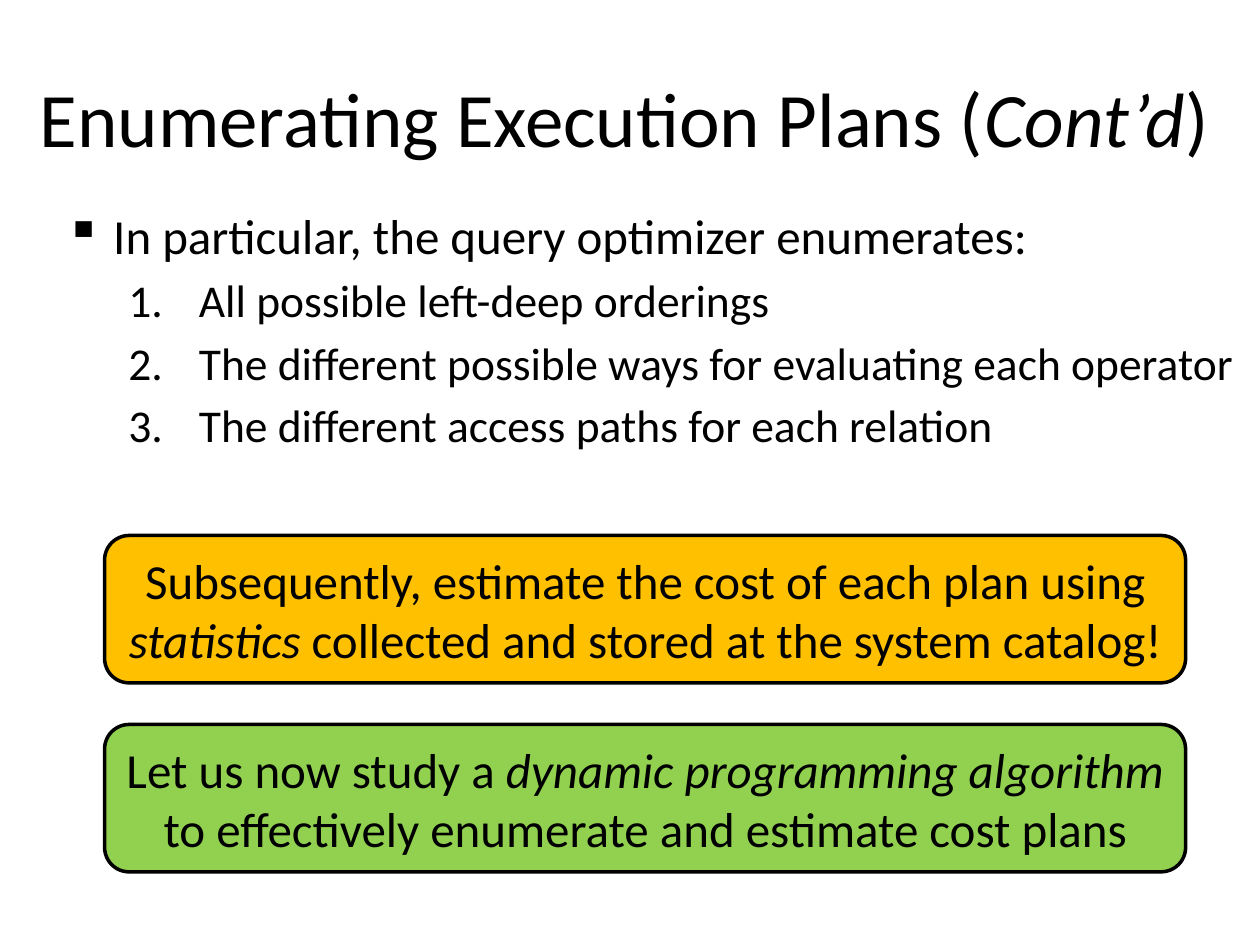
"""Build the slide on enumerating execution plans."""
import lxml.etree
import pptx
import pptx.dml.color
import pptx.enum.shapes
import pptx.enum.text
import pptx.oxml.ns
import pptx.util

Inches = pptx.util.Inches
Pt = pptx.util.Pt
CENTER = pptx.enum.text.PP_ALIGN.CENTER
MIDDLE = pptx.enum.text.MSO_ANCHOR.MIDDLE


def color(hex_string):
    return pptx.dml.color.RGBColor.from_string(hex_string)


def write(paragraph, size, *texts):
    paragraph.font.name = "Calibri"
    paragraph.font.size = Pt(size)
    paragraph.font.color.rgb = color("000000")
    for index, text in enumerate(texts):
        run = paragraph.add_run()
        run.text = text
        if index % 2:
            run.font.italic = True


presentation = pptx.Presentation()
presentation.slide_width = Inches(10)
presentation.slide_height = Inches(7.5)
slide = presentation.slides.add_slide(presentation.slide_layouts[6])

title = slide.shapes.add_textbox(Inches(0.08), Inches(0.3), Inches(9.75), Inches(1.25))
title.text_frame.word_wrap = True
title.text_frame.vertical_anchor = MIDDLE
title.text_frame.paragraphs[0].alignment = CENTER
write(title.text_frame.paragraphs[0], 44, "Enumerating Execution Plans (", "Cont’d", ")")

body = slide.shapes.add_textbox(Inches(0.42), Inches(1.58), Inches(9.58), Inches(5.75))
body.text_frame.word_wrap = True
items = [
    (0, "In particular, the query optimizer enumerates:"),
    (1, "All possible left-deep orderings"),
    (1, "The different possible ways for evaluating each operator"),
    (1, "The different access paths for each relation"),
]
levels = [
    (28, 0.38, -0.38, "a:buChar", {"char": "▪"}),
    (26, 1.06, -0.56, "a:buAutoNum", {"type": "arabicPeriod"}),
]
for index, (level, text) in enumerate(items):
    paragraph = body.text_frame.add_paragraph() if index else body.text_frame.paragraphs[0]
    size, margin, indent, bullet, attributes = levels[level]
    paragraph.level = level
    paragraph.space_before = Pt(4.6)
    write(paragraph, size, text)
    properties = paragraph._p.get_or_add_pPr()
    properties.set("marL", str(Inches(margin)))
    properties.set("indent", str(Inches(indent)))
    marker = lxml.etree.Element(pptx.oxml.ns.qn(bullet), attributes)
    properties.find(pptx.oxml.ns.qn("a:spcBef")).addnext(marker)

callouts = [
    (4.25, "FFC000", ("Subsequently, estimate the cost of each plan using ", "statistics",
                      " collected and stored at the system catalog!")),
    (5.75, "92D050", ("Let us now study a ", "dynamic programming algorithm ",
                      "to effectively enumerate and estimate cost plans")),
]
for top, fill, texts in callouts:
    callout = slide.shapes.add_shape(
        pptx.enum.shapes.MSO_SHAPE.ROUNDED_RECTANGLE,
        Inches(0.83), Inches(top), Inches(8.58), Inches(1.17))
    callout.shadow.inherit = False
    callout.fill.solid()
    callout.fill.fore_color.rgb = color(fill)
    callout.line.color.rgb = color("000000")
    callout.line.width = Pt(2)
    callout.text_frame.word_wrap = True
    callout.text_frame.vertical_anchor = MIDDLE
    callout.text_frame.paragraphs[0].alignment = CENTER
    write(callout.text_frame.paragraphs[0], 28, *texts)

presentation.save("out.pptx")
